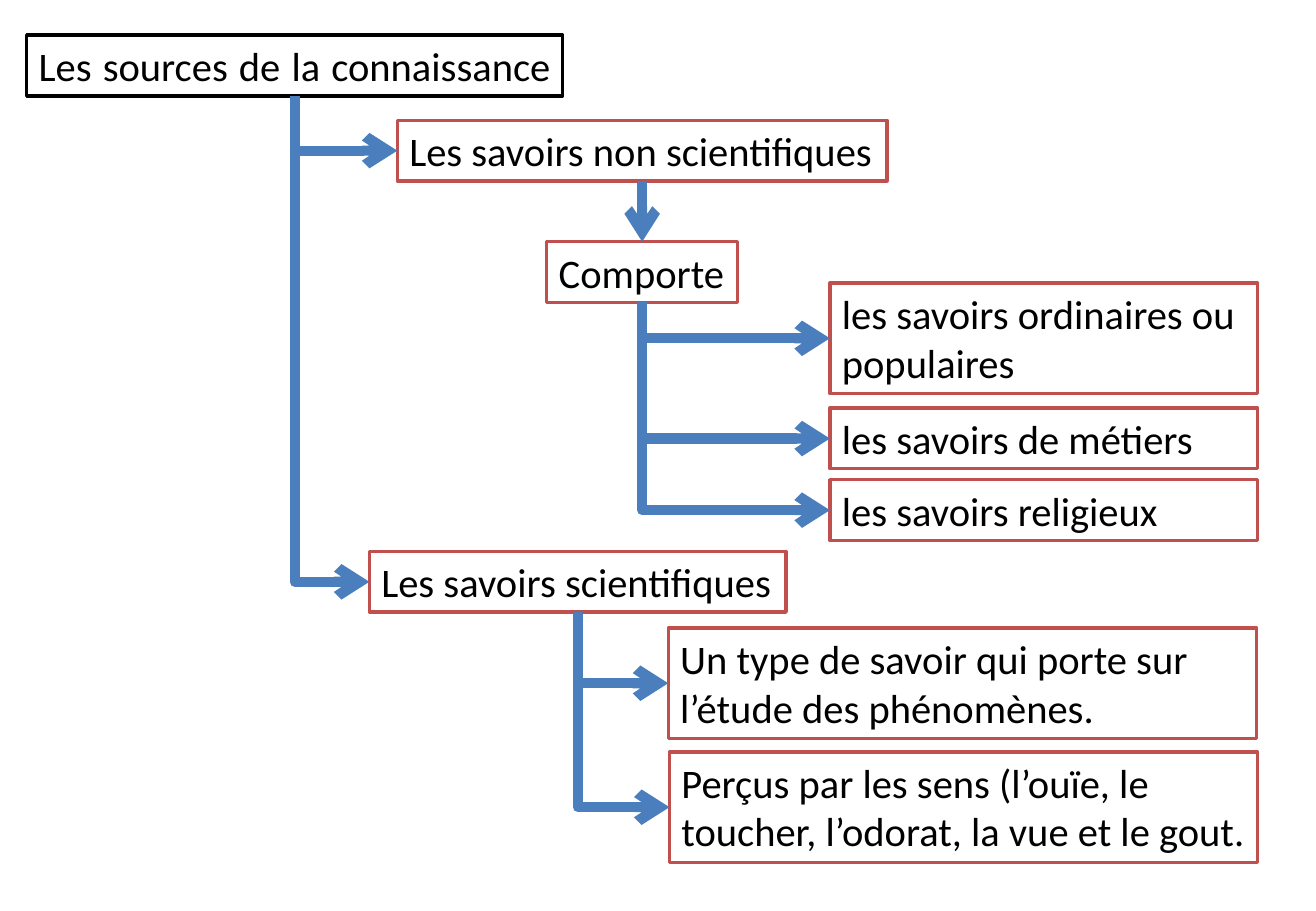
from lxml.etree import SubElement
from pptx import Presentation
from pptx.dml.color import RGBColor
from pptx.enum.shapes import MSO_CONNECTOR as Connector, MSO_SHAPE as Shape
from pptx.enum.text import MSO_ANCHOR as Anchor, PP_ALIGN as Align
from pptx.oxml.ns import qn
from pptx.util import Pt

PX = 9144  # EMU in one px, 100 px to the inch
BOTTOM, LEFT, TOP = 2, 1, 0
COLORS = {"white": "FFFFFF", "black": "000000", "red": "C0504D", "blue": "4B7EBC"}


def color(name):
    return RGBColor.from_string(COLORS[name])


def write_text(shape, text, size=24, font="Calibri", ink="black", align=Align.LEFT, wrap=True):
    frame = shape.text_frame
    frame.word_wrap = wrap
    frame.vertical_anchor = Anchor.TOP
    paragraph = frame.paragraphs[0]
    paragraph.alignment = align
    run = paragraph.add_run()
    run.text = text
    run.font.size = Pt(size)
    run.font.name = font
    run.font.color.rgb = color(ink)


def add_box(slide, text, left, top, width, height=50, border="red", **text_format):
    box = slide.shapes.add_shape(
        Shape.RECTANGLE, left * PX, top * PX, width * PX, height * PX)
    box.shadow.inherit = False
    box.fill.solid()
    box.fill.fore_color.rgb = color("white")
    box.line.color.rgb = color(border)
    box.line.width = Pt(2)
    write_text(box, text, **text_format)
    return box


def add_arrow(slide, source, target, kind, target_side):
    """Join the bottom of source to one side of target."""
    arrow = slide.shapes.add_connector(kind, 0, 0, 0, 0)
    arrow.begin_connect(source, BOTTOM)
    arrow.end_connect(target, target_side)
    arrow.line.color.rgb = color("blue")
    arrow.line.width = Pt(6)
    properties = arrow._element.spPr
    SubElement(properties.find(qn("a:ln")), qn("a:tailEnd"), type="arrow")
    SubElement(properties, qn("a:effectLst"))
    return arrow


def add_branch(slide, source, target):
    """Go down from source, then right to target, with a single bend."""
    arrow = add_arrow(slide, source, target, Connector.ELBOW, LEFT)
    across, down = arrow.width, arrow.height
    arrow.left += (across - down) // 2
    arrow.top += (down - across) // 2
    arrow.width, arrow.height = down, across
    properties = arrow._element.spPr
    properties.find(qn("a:prstGeom")).set("prst", "bentConnector2")
    frame = properties.find(qn("a:xfrm"))
    frame.set("rot", str(270 * 60000))
    frame.set("flipH", "1")


def main():
    presentation = Presentation()
    presentation.slide_width = 1083 * PX
    presentation.slide_height = 750 * PX
    slide = presentation.slides.add_slide(presentation.slide_layouts[6])

    sources = add_box(slide, "Les sources de la connaissance ", 22, 29, 441,
                      border="black", align=Align.JUSTIFY)
    non_scientific = add_box(slide, "Les savoirs non scientifiques", 327, 99, 403)
    scientific = add_box(slide, "Les savoirs scientifiques", 304, 454, 343)
    includes = add_box(slide, "Comporte", 450, 199, 157, wrap=False)
    ordinary = add_box(slide, "les savoirs ordinaires ou populaires", 683, 233, 352, 91)
    trades = add_box(slide, "les savoirs de métiers", 683, 336, 352)
    religious = add_box(slide, "les savoirs religieux", 683, 395, 352)
    phenomena = add_box(
        slide, "Un type de savoir qui porte sur l’étude des phénomènes.", 550, 517, 484, 91)
    senses = add_box(
        slide, "Perçus par les sens (l’ouïe, le toucher, l’odorat, la vue et le gout.",
        551, 619, 484, 91)

    add_arrow(slide, non_scientific, includes, Connector.STRAIGHT, TOP)
    branches = [
        (sources, [non_scientific, scientific]),
        (includes, [ordinary, trades, religious]),
        (scientific, [phenomena, senses]),
    ]
    for source, targets in branches:
        for target in targets:
            add_branch(slide, source, target)

    presentation.save("out.pptx")


if __name__ == "__main__":
    main()
